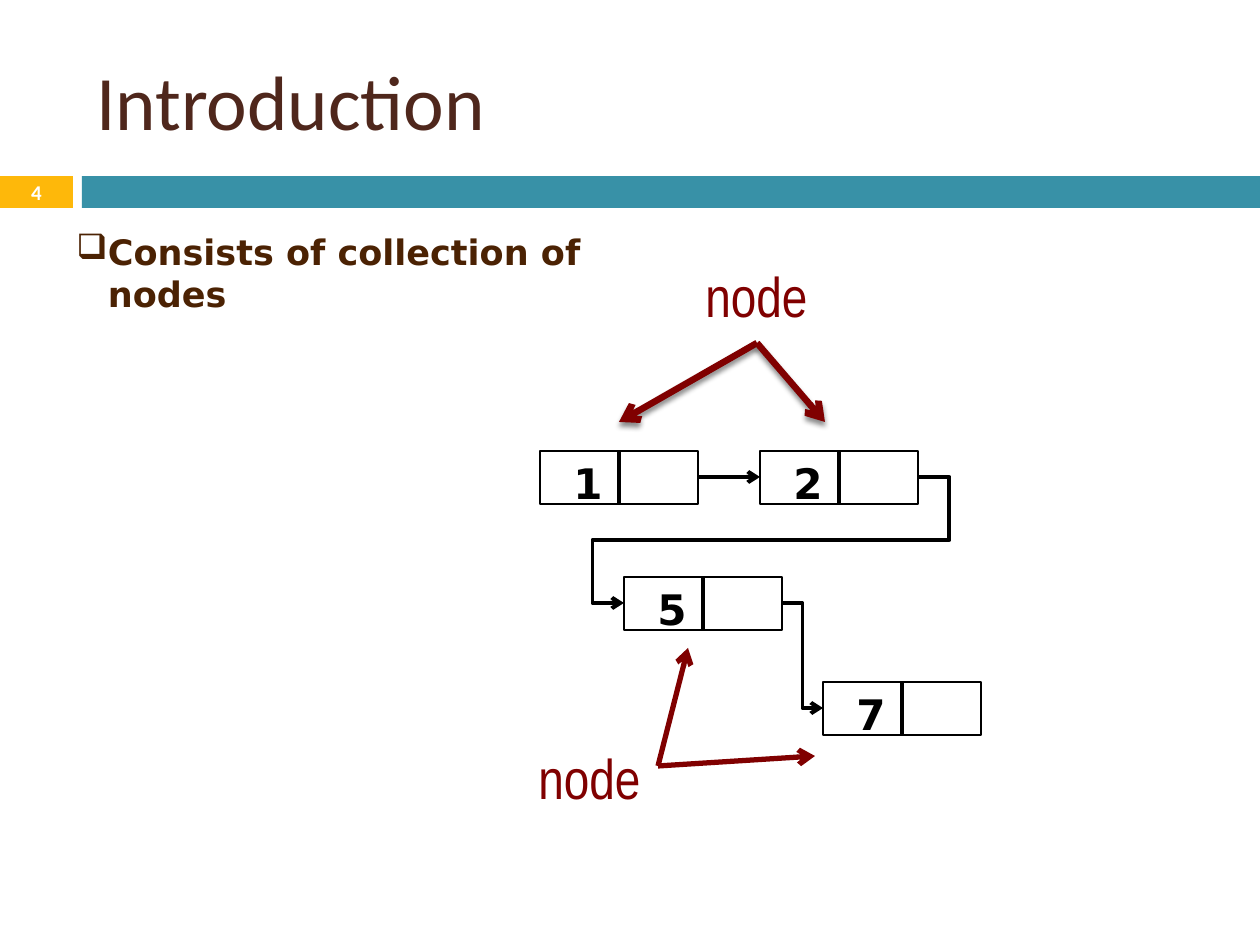
from lxml.etree import SubElement
from pptx import Presentation
from pptx.dml.color import RGBColor
from pptx.enum.shapes import MSO_CONNECTOR, MSO_SHAPE
from pptx.enum.text import MSO_ANCHOR, PP_ALIGN
from pptx.oxml.ns import qn
from pptx.util import Emu, Pt

SCALE = 914400 / 126
MAROON, BLACK, WHITE = "800000", "000000", "FFFFFF"


def px(value):
    return Emu(round(value * SCALE))


def color(value):
    return RGBColor.from_string(value)


presentation = Presentation()
presentation.slide_width, presentation.slide_height = px(1260), px(945)
slide = presentation.slides.add_slide(presentation.slide_layouts[6])
shapes = slide.shapes

# Header bands and the four nodes: left, top, width, height, fill, outlined
nodes = {"1": (540, 451), "2": (760, 451), "5": (624, 577), "7": (823, 682)}
node_width, node_height = 158, 53
rectangles = [
    (0, 176, 73, 32, "FEB80A", False),
    (82, 176, 1178, 32, "3891A7", False),
]
for left, top in nodes.values():
    rectangles.append((left, top, node_width, node_height, WHITE, True))

for left, top, width, height, fill, outlined in rectangles:
    shape = shapes.add_shape(MSO_SHAPE.RECTANGLE, px(left), px(top), px(width), px(height))
    shape.shadow.inherit = False
    shape.fill.solid()
    shape.fill.fore_color.rgb = color(fill)
    if outlined:
        shape.line.color.rgb = color(BLACK)
        shape.line.width = Pt(1.5)
    else:
        shape.line.fill.background()

# Lines: start, end, colour, width, arrowhead, elbow, shadow
lines = []
for left, top in nodes.values():
    middle = left + node_width // 2
    lines.append(((middle, top), (middle, top + node_height), BLACK, 2.25, False, False, False))
lines += [
    ((698, 477), (760, 477), BLACK, 2.25, True, False, False),
    ((918, 477), (624, 603), BLACK, 2.25, True, True, False),
    ((782, 603), (823, 708), BLACK, 2.25, True, True, False),
    ((757, 343), (619, 422), MAROON, 3.75, True, False, True),
    ((757, 343), (825, 422), MAROON, 3.75, True, False, True),
    ((658, 766), (688, 648), MAROON, 3, True, False, False),
    ((658, 766), (815, 756), MAROON, 3, True, False, False),
]
for start, end, line_color, width, arrow, elbow, shadow in lines:
    kind = MSO_CONNECTOR.ELBOW if elbow else MSO_CONNECTOR.STRAIGHT
    connector = shapes.add_connector(kind, *map(px, start + end))
    connector.line.color.rgb = color(line_color)
    connector.line.width = Pt(width)
    properties = connector._element.spPr
    if arrow:
        SubElement(properties.find(qn("a:ln")), qn("a:tailEnd"), type="arrow")
    effects = SubElement(properties, qn("a:effectLst"))
    if shadow:
        outer = SubElement(effects, qn("a:outerShdw"), blurRad="38100", dist="30480",
                           dir="5400000", rotWithShape="0")
        shade = SubElement(outer, qn("a:srgbClr"), val=BLACK)
        SubElement(shade, qn("a:alpha"), val="45000")
    if elbow and end[0] < start[0]:
        # The link back to the next row leaves and enters outside its own box
        geometry = properties.find(qn("a:prstGeom"))
        geometry.set("prst", "bentConnector5")
        adjustments = geometry.find(qn("a:avLst"))
        for number, value in enumerate((-10700, 50000, 110700), 1):
            SubElement(adjustments, qn("a:gd"), name=f"adj{number}", fmla=f"val {value}")

# Texts: wording, box, style
styles = {
    "title": {"name": "Calibri", "size": Pt(44), "color": "4F271C"},
    "number": {"name": "Calibri", "size": Pt(12), "bold": True, "color": WHITE},
    "bullet": {"name": "DejaVu Sans", "size": Pt(20), "bold": True, "color": "4B2203"},
    "caption": {"name": "Arial Narrow", "size": Pt(32), "color": MAROON},
    "value": {"name": "DejaVu Sans", "size": Pt(24), "bold": True, "color": BLACK},
}
texts = [
    ("Introduction", (84, 32, 1124, 136), "title"),
    ("4", (0, 175, 73, 34), "number"),
    ("Consists of collection of nodes", (64, 224, 556, 140), "bullet"),
    ("node", (638, 255, 237, 88), "caption"),
    ("node", (471, 737, 237, 88), "caption"),
]
for value, (left, top) in nodes.items():
    texts.append((value, (left + 21, top, 47, 63), "value"))

for text, box, style in texts:
    shape = shapes.add_textbox(*map(px, box))
    frame = shape.text_frame
    frame.word_wrap = style != "value"
    if style in ("title", "number"):
        frame.vertical_anchor = MSO_ANCHOR.MIDDLE
    paragraph = frame.paragraphs[0]
    if style in ("number", "caption"):
        paragraph.alignment = PP_ALIGN.CENTER
    if style == "caption":
        paragraph.space_before = Pt(3)
    if style == "bullet":
        paragraph_properties = paragraph._p.get_or_add_pPr()
        paragraph_properties.set("marL", "228600")
        paragraph_properties.set("indent", "-228600")
        SubElement(paragraph_properties, qn("a:buChar"), char="❑")
    run = paragraph.add_run()
    run.text = text
    for attribute, setting in styles[style].items():
        if attribute == "color":
            run.font.color.rgb = color(setting)
        else:
            setattr(run.font, attribute, setting)

presentation.save("out.pptx")
